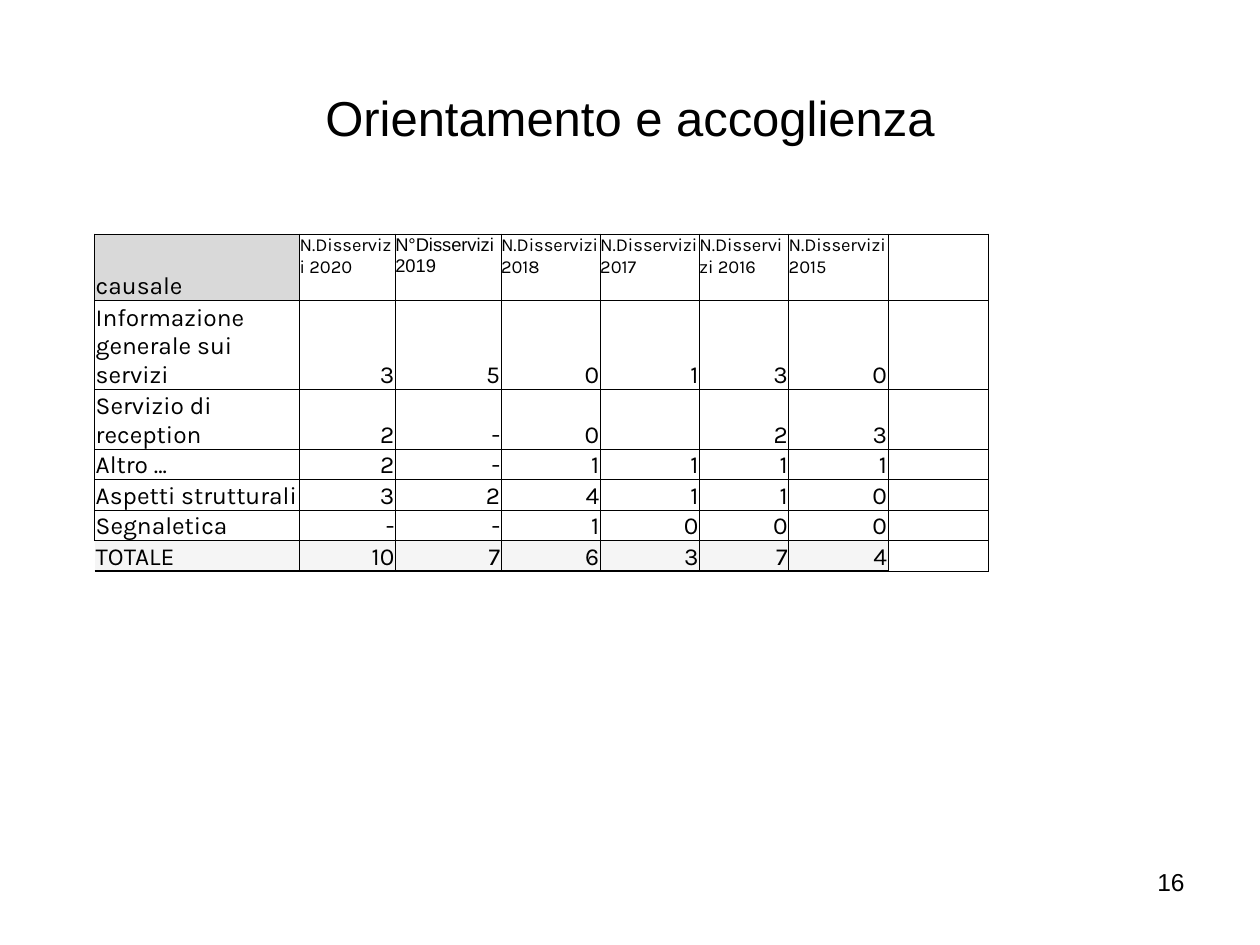
import pptx
import pptx.util
import pptx.dml.color
import pptx.enum.text
import pptx.oxml
from pptx.oxml.ns import nsdecls

Cm, Pt = pptx.util.Cm, pptx.util.Pt
Align = pptx.enum.text.PP_ALIGN
Anchor = pptx.enum.text.MSO_ANCHOR

HEADS = ["causale", "N.Disservizi 2020", "N°Disservizi\n2019", "N.Disservizi 2018",
         "N.Disservizi 2017", "N.Disservizi 2016", "N.Disservizi 2015", ""]
ROWS = [
    ["Informazione generale sui servizi", "3", "5", "0", "1", "3", "0", ""],
    ["Servizio di reception", "2", "-", "0", "", "2", "3", ""],
    ["Altro ...", "2", "-", "1", "1", "1", "1", ""],
    ["Aspetti strutturali", "3", "2", "4", "1", "1", "0", ""],
    ["Segnaletica", "-", "-", "1", "0", "0", "0", ""],
    ["TOTALE", "10", "7", "6", "3", "7", "4", ""],
]
WIDTHS = [4.13, 1.93, 2.13, 2, 2, 1.8, 2, 2.02]
HEIGHTS = [1.33, 1.75, 1.17] + [0.6] * 4


def color(code):
    return pptx.dml.color.RGBColor.from_string(code)


class Page:
    ink = "000000"
    size = 14

    def __init__(self, slide):
        self.slide = slide

    def words(self, frame, text, face, size, align):
        """Fill a text frame with text in one style."""
        frame.text = text
        for para in frame.paragraphs:
            para.alignment = align
            para.font.name = face
            para.font.size = Pt(size)
            para.font.color.rgb = color(self.ink)

    def label(self, box, text, size, align, anchor):
        frame = self.slide.shapes.add_textbox(*map(Cm, box)).text_frame
        frame.word_wrap = True
        frame.vertical_anchor = anchor
        self.words(frame, text, "Arial", size, align)

    def edge(self, cell, side, width):
        """Draw one side of a cell: L, R, T or B; no width means no line."""
        paint = (f'<a:solidFill><a:srgbClr val="{self.ink}"/></a:solidFill>'
                 if width else "<a:noFill/>")
        cell._tc.get_or_add_tcPr().append(pptx.oxml.parse_xml(
            f'<a:ln{side} {nsdecls("a")} w="{Pt(width)}">{paint}</a:ln{side}>'))

    def cell(self, cell, row, col, text):
        head, total = row == 0, row == len(ROWS)
        last = col == len(HEADS) - 1
        small = head and col > 0
        cell.margin_left = cell.margin_right = Cm(0 if small else 0.02)
        cell.margin_top, cell.margin_bottom = Cm(0.02), 0
        cell.vertical_anchor = Anchor.TOP if small else Anchor.BOTTOM
        face = "Arial" if small and col == 2 else "Karla"
        align = Align.LEFT if head or col == 0 else Align.RIGHT
        self.words(cell.text_frame, text, face, 10.5 if small else self.size, align)

        self.edge(cell, "L", 0 if total and col == 0 else 0.5)
        self.edge(cell, "R", 0.5)
        self.edge(cell, "T", 1 if total and not last else 0.5)
        self.edge(cell, "B", 1 if row >= len(ROWS) - 1 and not last else 0.5)
        fill = "FFFFFF"
        if head and col == 0:
            fill = "D9D9D9"
        elif total and not last:
            fill = "F5F5F5"
        cell.fill.solid()
        cell.fill.fore_color.rgb = color(fill)

    def table(self, left, top, rows):
        table = self.slide.shapes.add_table(
            len(rows), len(WIDTHS), Cm(left), Cm(top),
            Cm(sum(WIDTHS)), Cm(sum(HEIGHTS))).table
        for part, width in zip(table.columns, WIDTHS):
            part.width = Cm(width)
        for part, height in zip(table.rows, HEIGHTS):
            part.height = Cm(height)
        for row, texts in enumerate(rows):
            for col, text in enumerate(texts):
                self.cell(table.cell(row, col), row, col, text)


def main():
    deck = pptx.Presentation()
    deck.slide_width, deck.slide_height = Cm(25.4), Cm(19.05)
    page = Page(deck.slides.add_slide(deck.slide_layouts[6]))
    page.label((1.27, 0.76, 22.86, 3.18), "Orientamento e accoglienza", 28,
               Align.CENTER, Anchor.MIDDLE)
    page.table(1.91, 4.72, [HEADS] + ROWS)
    page.label((18.21, 17.35, 5.92, 1.32), "16", 14, Align.RIGHT, Anchor.TOP)
    deck.save("out.pptx")


if __name__ == "__main__":
    main()
